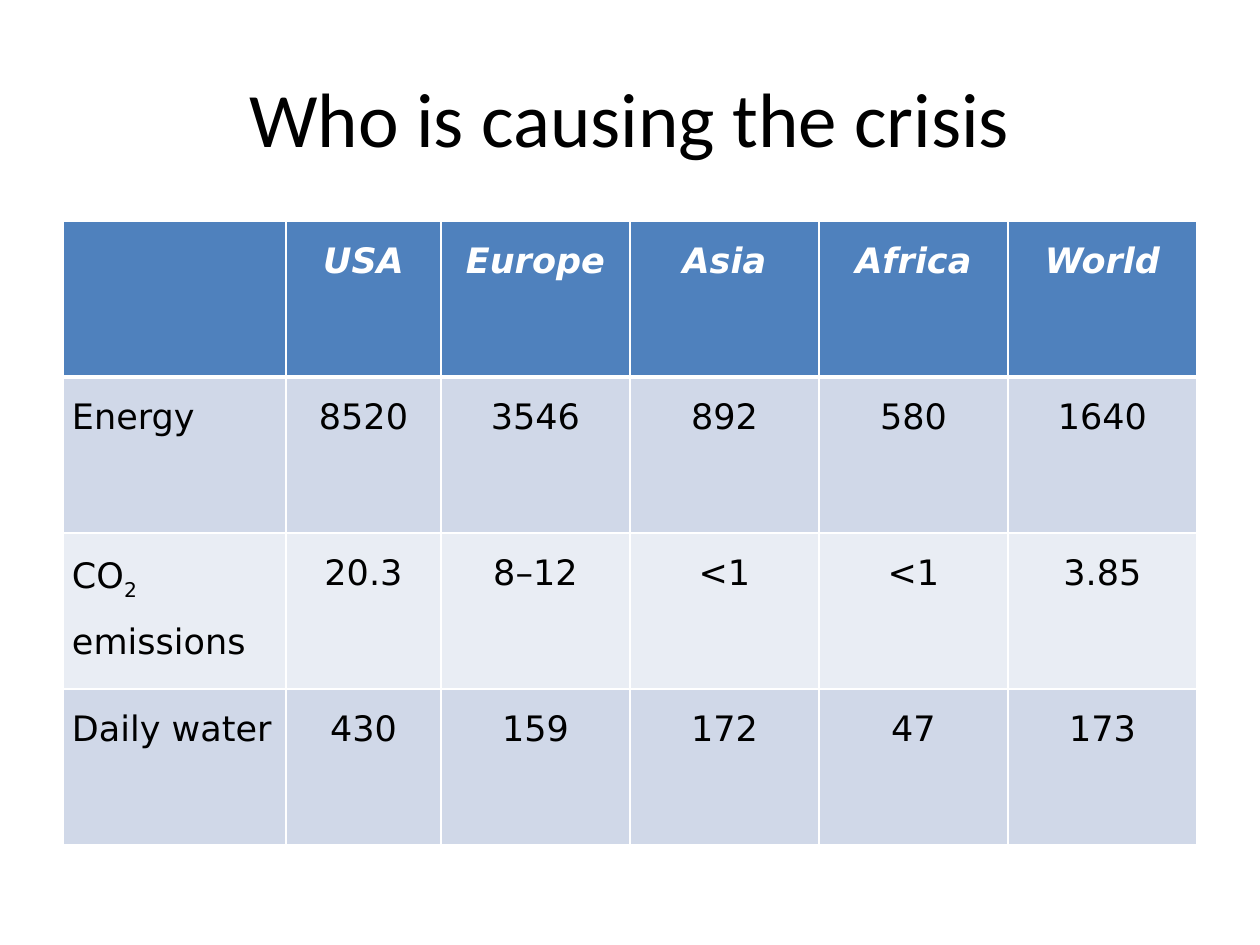
from lxml import etree
from pptx import Presentation
from pptx import util as u
from pptx.dml.color import RGBColor
from pptx.enum import text
from pptx.oxml import ns

SCALE = 914400 / 126
COLORS = {
    "header": "4F81BD",
    "band_dark": "D0D8E8",
    "band_light": "E9EDF4",
    "white": "FFFFFF",
    "black": "000000",
}
ROWS = [
    ["", "USA", "Europe", "Asia", "Africa", "World"],
    ["Energy", "8520", "3546", "892", "580", "1640"],
    ["CO", "20.3", "8–12", "<1", "<1", "3.85"],
    ["Daily water", "430", "159", "172", "47", "173"],
]
COLUMN_WIDTHS = [223, 155, 189, 189, 189, 189]
ROW_HEIGHT = 156


def px(length):
    return u.Emu(round(length * SCALE))


def add_text(paragraph, content, size=20, font="DejaVu Sans", color="black",
             bold=False, italic=False, baseline=0):
    run = paragraph.add_run()
    run.text = content
    run.font.size = u.Pt(size)
    run.font.name = font
    run.font.bold = bold
    run.font.italic = italic
    run.font.color.rgb = RGBColor.from_string(COLORS[color])
    if baseline:
        run._r.get_or_add_rPr().set("baseline", str(baseline * 1000))


presentation = Presentation()
presentation.slide_width = px(1260)
presentation.slide_height = px(945)
slide = presentation.slides.add_slide(presentation.slide_layouts[5])

title = slide.shapes.title
title.left, title.top, title.width, title.height = px(63), px(38), px(1134), px(157)
title.text_frame.vertical_anchor = text.MSO_ANCHOR.MIDDLE
title_paragraph = title.text_frame.paragraphs[0]
title_paragraph.alignment = text.PP_ALIGN.CENTER
add_text(title_paragraph, "Who is causing the crisis", size=44, font="Calibri")

table = slide.shapes.add_table(
    len(ROWS), len(COLUMN_WIDTHS), px(63), px(221),
    px(sum(COLUMN_WIDTHS)), px(ROW_HEIGHT * len(ROWS))).table
for column, width in zip(table.columns, COLUMN_WIDTHS):
    column.width = px(width)
for row in table.rows:
    row.height = px(ROW_HEIGHT)

for row_index, values in enumerate(ROWS):
    is_header = row_index == 0
    band = "header" if is_header else "band_dark" if row_index % 2 else "band_light"
    for column_index, value in enumerate(values):
        cell = table.cell(row_index, column_index)
        cell.margin_left = cell.margin_right = px(9)
        cell.margin_top = cell.margin_bottom = 0

        properties = cell._tc.get_or_add_tcPr()
        for side in ("L", "R", "T", "B"):
            thick = (is_header and side == "B") or (row_index == 1 and side == "T")
            line = etree.SubElement(properties, ns.qn(f"a:ln{side}"),
                                    w=str(u.Pt(3 if thick else 1)))
            line_fill = etree.SubElement(line, ns.qn("a:solidFill"))
            etree.SubElement(line_fill, ns.qn("a:srgbClr"), val=COLORS["white"])
        cell.fill.solid()
        cell.fill.fore_color.rgb = RGBColor.from_string(COLORS[band])

        paragraph = cell.text_frame.paragraphs[0]
        paragraph.line_spacing = 1.5
        paragraph.alignment = text.PP_ALIGN.CENTER if column_index else text.PP_ALIGN.LEFT
        if value:
            add_text(paragraph, value, color="white" if is_header else "black",
                     bold=is_header, italic=is_header)

emissions = table.cell(2, 0).text_frame.paragraphs[0]
add_text(emissions, "2", baseline=-25)
add_text(emissions, " emissions")

presentation.save("out.pptx")
